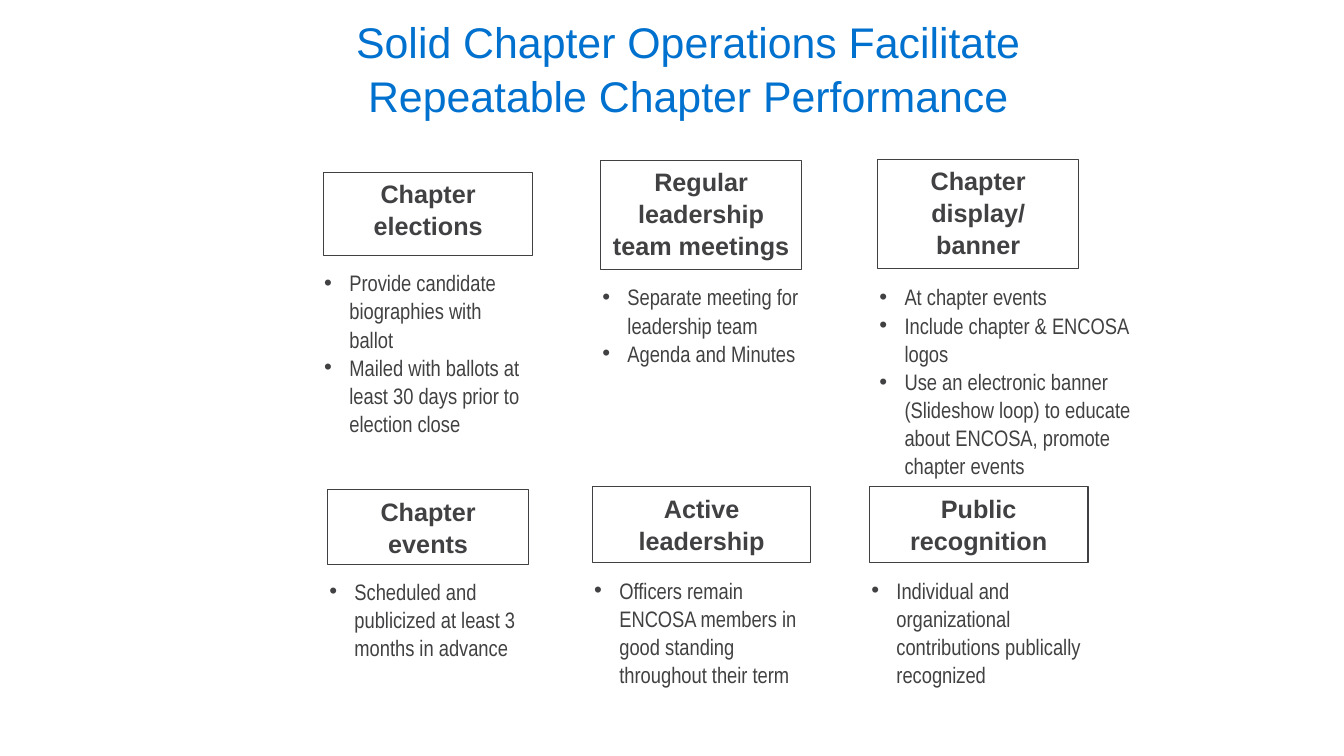
from pptx import Presentation
from pptx.dml.color import RGBColor
from pptx.enum.shapes import MSO_SHAPE as SHAPE
from pptx.enum.text import MSO_ANCHOR as ANCHOR, PP_ALIGN as ALIGN
from pptx.oxml.xmlchemy import OxmlElement
from pptx.util import Inches, Pt

BLUE, GRAY = "0071CE", "414042"


def rgb(value):
    return RGBColor.from_string(value)


def write(shape, *paragraphs, size, color=GRAY, font="Arial", bold=False,
          align=ALIGN.CENTER, anchor=ANCHOR.TOP, bullet=False):
    frame = shape.text_frame
    frame.word_wrap = True
    frame.vertical_anchor = anchor
    for i, text in enumerate(paragraphs):
        p = frame.paragraphs[0] if i == 0 else frame.add_paragraph()
        p.text = text
        p.alignment = align
        p.line_spacing = 1.05
        if bullet:
            props = p._p.get_or_add_pPr()
            props.set("marL", str(Inches(0.25)))
            props.set("indent", str(Inches(-0.25)))
            typeface = OxmlElement("a:buFont")
            typeface.set("typeface", "Arial")
            mark = OxmlElement("a:buChar")
            mark.set("char", "•")
            props.extend([typeface, mark])
        p.font.name = font
        p.font.size = Pt(size)
        p.font.bold = bold
        p.font.color.rgb = rgb(color)


prs = Presentation()
prs.slide_width, prs.slide_height = Inches(13.34), Inches(7.5)
slide = prs.slides.add_slide(prs.slide_layouts[6])

# Title
title = slide.shapes.add_textbox(Inches(3.12), Inches(0.6), Inches(7.42), Inches(0.67))
write(title, "Solid Chapter Operations Facilitate Repeatable Chapter Performance",
      size=30.6, color=BLUE, anchor=ANCHOR.BOTTOM)
title.text_frame.margin_left = title.text_frame.margin_right = Inches(0.13)
title.text_frame.margin_top = title.text_frame.margin_bottom = Inches(0.07)

# Topics: heading, its box, bullets, their box (left, top, width, height)
topics = [
    ("Chapter elections", (3.21, 1.71, 2.08, 0.83),
     ["Provide candidate biographies with ballot",
      "Mailed with ballots at least 30 days prior to election close"],
     (3.12, 2.61, 2.17, 1.72)),
    ("Regular leadership team meetings", (5.96, 1.59, 2, 1.08),
     ["Separate meeting for leadership team", "Agenda and Minutes"],
     (5.88, 2.75, 2.17, 0.91)),
    ("Chapter display/ banner", (8.71, 1.58, 2, 1.08),
     ["At chapter events", "Include chapter & ENCOSA logos",
      "Use an electronic banner (Slideshow loop) to educate about ENCOSA, "
      "promote chapter events"],
     (8.63, 2.75, 2.71, 1.99)),
    ("Chapter events", (3.25, 4.86, 2, 0.74),
     ["Scheduled and publicized at least 3 months in advance"],
     (3.17, 5.67, 2.17, 0.9)),
    ("Active leadership", (5.88, 4.83, 2.17, 0.75),
     ["Officers remain ENCOSA members in good standing throughout their term"],
     (5.8, 5.66, 2.33, 1.17)),
    ("Public recognition", (8.63, 4.83, 2.17, 0.75),
     ["Individual and organizational contributions publically recognized"],
     (8.55, 5.66, 2.33, 1.17)),
]
for topic, topic_box, practices, practices_box in topics:
    heading = slide.shapes.add_shape(SHAPE.RECTANGLE, *map(Inches, topic_box))
    heading.shadow.inherit = False
    heading.fill.background()
    heading.line.color.rgb = rgb(GRAY)
    heading.line.width = Pt(0.75)
    write(heading, topic, size=18, bold=True)

    details = slide.shapes.add_textbox(*map(Inches, practices_box))
    write(details, *practices, size=16, font="Arial Narrow",
          align=ALIGN.LEFT, bullet=True)

prs.save("out.pptx")
